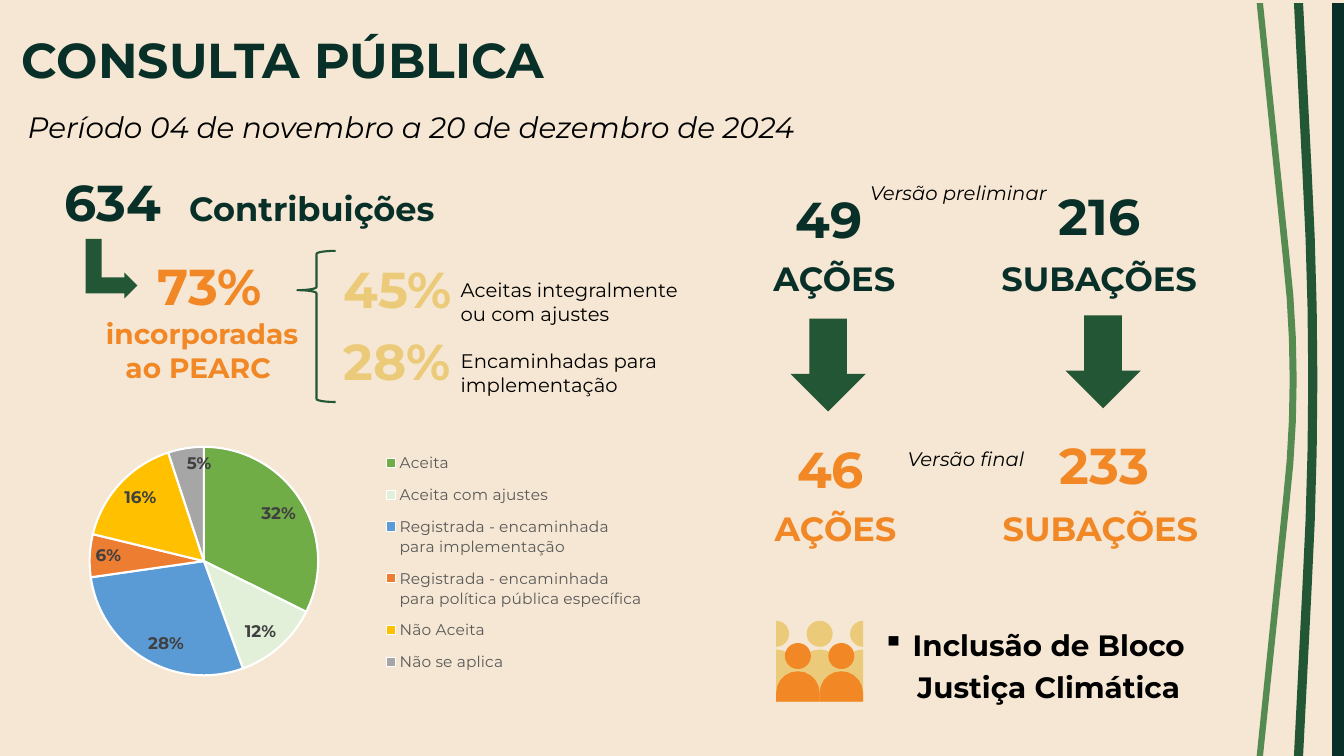
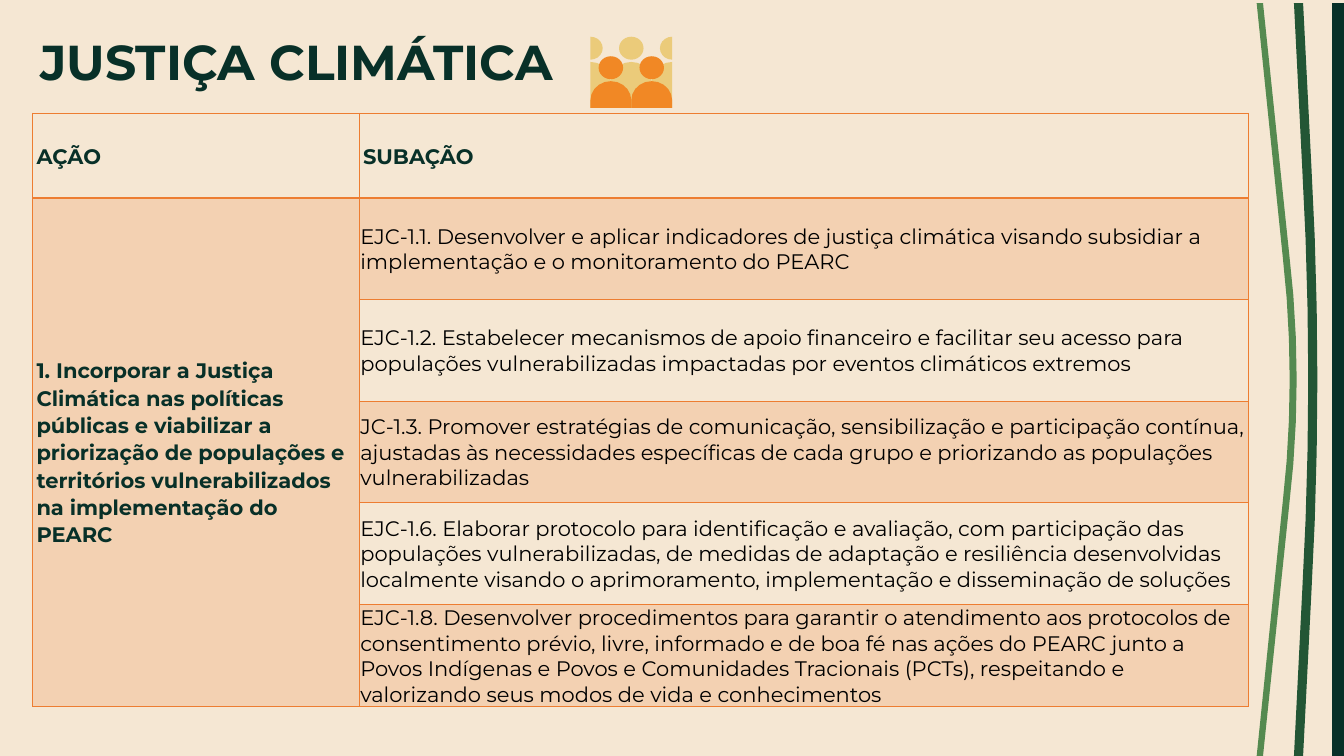
from math import cos, pi, sin

from lxml.etree import SubElement
from pptx import Presentation
from pptx.chart.data import CategoryChartData
from pptx.dml.color import RGBColor
from pptx.enum.chart import XL_CHART_TYPE, XL_LABEL_POSITION, XL_LEGEND_POSITION
from pptx.enum.shapes import MSO_SHAPE
from pptx.enum.text import MSO_ANCHOR, PP_ALIGN
from pptx.oxml import parse_xml
from pptx.oxml.ns import nsdecls, qn
from pptx.util import Cm, Pt

FONT = "Montserrat"
CREAM = RGBColor(0xF5, 0xE7, 0xD3)
DARK = RGBColor(0x08, 0x30, 0x28)
GREEN = RGBColor(0x23, 0x56, 0x35)
LIGHT_GREEN = RGBColor(0x55, 0x8A, 0x50)
ORANGE = RGBColor(0xF1, 0x88, 0x25)
SAND = RGBColor(0xEB, 0xCB, 0x7A)
TABLE_ORANGE = RGBColor(0xED, 0x7D, 0x31)
BLACK = RGBColor(0, 0, 0)
WHITE = RGBColor(0xFF, 0xFF, 0xFF)
LABEL_GRAY = RGBColor(0x40, 0x40, 0x40)
LEGEND_GRAY = RGBColor(0x59, 0x59, 0x59)

CENTER = PP_ALIGN.CENTER
BOLD = {"bold": True}
ITALIC = {"italic": True, "spacing": 1.2}

# Outlines in cm: two numbers are a straight step, six a Bézier curve
BANDS = [
    (DARK, [(33.56, 0.08), (33.87, 0.08), (33.87, 19.05), (33.56, 19.05)]),
    (GREEN, [(32.84, 0.08), (32.61, 0.08), (32.82, 4.27),
             (33.02, 7.77, 33.02, 11.35, 32.82, 14.86),
             (32.61, 19.05), (32.84, 19.05), (33.05, 14.94),
             (33.25, 11.38, 33.25, 7.75, 33.05, 4.19)]),
    (LIGHT_GREEN, [(32.49, 6.4), (31.83, 0.08), (31.67, 0.08), (32.33, 6.5),
                   (32.56, 8.51, 32.56, 10.62, 32.33, 12.62),
                   (31.67, 19.05), (31.83, 19.05), (32.49, 12.73),
                   (32.74, 10.67, 32.74, 8.46, 32.49, 6.4)]),
]

# Fractions of the icon: colour, centres, head height, shoulder height
PEOPLE_ROWS = [
    (SAND, (0, 0.5, 1), 0.22, 0.4),
    (ORANGE, (0.25, 0.75), 0.475, 0.65),
]
HEAD_RADIUS = 0.15
BODY_RADIUS = 0.25

# text, left, top, width, height, size, colour, style
CONSULTATION_TEXTS = [
    ("Período 04 de novembro a 20 de dezembro de 2024",
     0.45, 2.44, 21, 1.24, 21, BLACK, ITALIC),
    ("634", 1.37, 4.19, 3.4, 1.8, 36, DARK, BOLD),
    ("Contribuições", 4.23, 4.6, 7.26, 1.27, 24, DARK, {**BOLD, "align": CENTER}),
    ("73%", 3.72, 6.31, 3.6, 1.8, 36, ORANGE, BOLD),
    ("incorporadas ao PEARC ", 2.21, 7.85, 5.77, 1.96, 20, ORANGE,
     {**BOLD, "align": CENTER}),
    ("Versão preliminar", 21.68, 4.32, 7.19, 0.91, 14, BLACK, ITALIC),
    ("Versão final", 20.75, 11.01, 7.19, 0.91, 14, BLACK, {**ITALIC, "align": CENTER}),
    ("Inclusão de Bloco Justiça Climática", 20.4, 15.49, 10.82, 2.34, 21, BLACK,
     {**BOLD, "align": CENTER, "spacing": 1.2, "bullet": "▪"}),
]
SHARES = [
    ("45%", "Aceitas integralmente ou com ajustes"),
    ("28%", "Encaminhadas para implementação"),
]
SHARE_STEP = 1.8
# unit, preliminary and final count, count left and top, unit left and width, arrow left and top
COUNTS = [
    ("AÇÕES", "49", "46", 19.81, 4.62, 19.08, 3.89, 19.92, 8.03),
    ("SUBAÇÕES", "216", "233", 26.43, 4.53, 24.83, 5.74, 26.85, 7.95),
]
VERSION_STEP = (0.03, 6.29)

ANSWERS = [
    ("Aceita", 32, RGBColor(0x70, 0xAD, 0x47)),
    ("Aceita com ajustes", 12, RGBColor(0xE2, 0xF0, 0xD9)),
    ("Registrada - encaminhada para implementação", 28, RGBColor(0x5B, 0x9B, 0xD5)),
    ("Registrada - encaminhada para política pública específica", 6, TABLE_ORANGE),
    ("Não Aceita", 16, RGBColor(0xFF, 0xC0, 0x00)),
    ("Não se aplica", 5, RGBColor(0xA6, 0xA6, 0xA6)),
]

HEADERS = ["AÇÃO", "SUBAÇÃO"]
ACTION = ("1. Incorporar a Justiça Climática nas políticas públicas e viabilizar a "
          "priorização de populações e territórios vulnerabilizados na implementação do PEARC")
SUBACTIONS = [
    "EJC-1.1. Desenvolver e aplicar indicadores de justiça climática visando subsidiar a "
    "implementação e o monitoramento do PEARC",
    "EJC-1.2. Estabelecer mecanismos de apoio financeiro e facilitar seu acesso para "
    "populações vulnerabilizadas impactadas por eventos climáticos extremos",
    "JC-1.3. Promover estratégias de comunicação, sensibilização e participação contínua, "
    "ajustadas às necessidades específicas de cada grupo e priorizando as populações "
    "vulnerabilizadas",
    "EJC-1.6. Elaborar protocolo para identificação e avaliação, com participação das "
    "populações vulnerabilizadas, de medidas de adaptação e resiliência desenvolvidas "
    "localmente visando o aprimoramento, implementação e disseminação de soluções",
    "EJC-1.8. Desenvolver procedimentos para garantir o atendimento aos protocolos de "
    "consentimento prévio, livre, informado e de boa fé nas ações do PEARC junto a Povos "
    "Indígenas e Povos e Comunidades Tracionais (PCTs), respeitando e valorizando seus "
    "modos de vida e conhecimentos",
]


def style_font(font, size, color, bold=False, italic=False):
    font.name, font.size, font.bold, font.italic = FONT, Pt(size), bold, italic
    font.color.rgb = color


def add_text(slide, text, left, top, width, height, size, color, style):
    frame = slide.shapes.add_textbox(Cm(left), Cm(top), Cm(width), Cm(height)).text_frame
    frame.word_wrap = True
    frame.vertical_anchor = style.get("anchor", MSO_ANCHOR.TOP)
    frame.text = text
    paragraph = frame.paragraphs[0]
    paragraph.alignment = style.get("align", PP_ALIGN.LEFT)
    paragraph.line_spacing = style.get("spacing", 1.0)
    if "bullet" in style:
        properties = paragraph._p.get_or_add_pPr()
        properties.set("marL", str(Cm(1.24)))
        properties.set("indent", str(-Cm(0.76)))
        SubElement(properties, qn("a:buChar"), char=style["bullet"])
    style_font(paragraph.runs[0].font, size, color,
               style.get("bold", False), style.get("italic", False))


def add_preset(shapes, kind, left, top, width, height, color, rotation=0, adjustments=()):
    shape = shapes.add_shape(kind, Cm(left), Cm(top), Cm(width), Cm(height))
    shape.rotation = rotation
    for index, value in enumerate(adjustments):
        shape.adjustments[index] = value
    paint(shape, color)
    return shape


def paint(shape, color):
    shape.shadow.inherit = False
    shape.fill.solid()
    shape.fill.fore_color.rgb = color
    shape.line.fill.background()


def add_outline(shapes, points, color):
    corners = [(Cm(x), Cm(y)) for x, y in points]
    builder = shapes.build_freeform(*corners[0])
    builder.add_line_segments(corners[1:], close=True)
    paint(builder.convert_to_shape(), color)


def flatten(outline, pieces=6):
    """Turn an outline with Bézier steps into plain points."""
    points = []
    for step in outline:
        if len(step) == 2:
            points.append(step)
            continue
        (x0, y0), (x1, y1, x2, y2, x3, y3) = points[-1], step
        for t in (i / pieces for i in range(1, pieces + 1)):
            a, b, c, d = (1 - t) ** 3, 3 * t * (1 - t) ** 2, 3 * t * t * (1 - t), t ** 3
            points.append((a * x0 + b * x1 + c * x2 + d * x3,
                           a * y0 + b * y1 + c * y2 + d * y3))
    return points


def arc(x, y, radius, start, end):
    """Points on a circle between two angles, counted in quarter turns."""
    pieces = 5 * (end - start)
    angles = [(start + i / 5) * pi / 2 for i in range(pieces + 1)]
    return [(x + radius * cos(angle), y + radius * sin(angle)) for angle in angles]


def add_people_icon(slide, left, top, width, height):
    shapes = slide.shapes.add_group_shape().shapes
    add_preset(shapes, MSO_SHAPE.RECTANGLE, left, top, width, height, CREAM)

    def place(points):
        return [(left + width * x, top + height * y) for x, y in points]

    for color, centers, head, shoulder in PEOPLE_ROWS:
        for x in centers:
            first, last = (3 if x == 0 else 2), (3 if x == 1 else 4)
            body = arc(x, shoulder + BODY_RADIUS, BODY_RADIUS, first, last)
            body += [(body[-1][0], 1), (body[0][0], 1)]
            add_outline(shapes, place(body), color)
            if x in (0, 1):
                half = arc(x, head, HEAD_RADIUS, 3 - 2 * x, 5 - 2 * x)
                add_outline(shapes, place(half), color)
            else:
                corner = place([(x - HEAD_RADIUS, head - HEAD_RADIUS)])[0]
                add_preset(shapes, MSO_SHAPE.OVAL, *corner, 2 * HEAD_RADIUS * width,
                           2 * HEAD_RADIUS * height, color)


def add_slide(presentation, title, left, top, width, height):
    slide = presentation.slides.add_slide(presentation.slide_layouts[6])
    add_text(slide, title, left, top, width, height, 35, DARK,
             {**BOLD, "spacing": 0.9, "anchor": MSO_ANCHOR.MIDDLE})
    bands = slide.shapes.add_group_shape()
    for color, outline in BANDS:
        add_outline(bands.shapes, flatten(outline), color)
    return slide


def set_layout(parent, position, x, y, width, height, inner=False):
    """Fix the place of a chart part, in fractions of the chart."""
    for old in parent.findall(qn("c:layout")):
        parent.remove(old)
    layout = parse_xml(f"<c:layout {nsdecls('c')}><c:manualLayout/></c:layout>")
    values = {"xMode": "edge", "yMode": "edge", "x": x, "y": y, "w": width, "h": height}
    if inner:
        values = {"layoutTarget": "inner", **values}
    for name, value in values.items():
        SubElement(layout[0], qn(f"c:{name}"), val=str(value))
    parent.insert(position, layout)


def add_answers_chart(slide):
    data = CategoryChartData()
    data.categories = [name for name, _, _ in ANSWERS]
    data.add_series("Series 1", [value for _, value, _ in ANSWERS])
    chart = slide.shapes.add_chart(XL_CHART_TYPE.PIE, Cm(0.63), Cm(10.55),
                                   Cm(15.82), Cm(7.11), data).chart
    style_font(chart.font, 12, BLACK)
    chart.has_title = False
    chart.has_legend = True
    chart.legend.position = XL_LEGEND_POSITION.RIGHT
    chart.legend.include_in_layout = False
    style_font(chart.legend.font, 11, LEGEND_GRAY)
    set_layout(chart.legend._element, 1, 0.58, 0.08, 0.41, 0.86)
    set_layout(chart._chartSpace.chart.plotArea, 0, 0.04, 0.1, 0.49, 0.81, inner=True)
    plot = chart.plots[0]
    plot.vary_by_categories = True
    plot.has_data_labels = True
    labels = plot.data_labels
    labels.show_percentage, labels.show_value = True, False
    labels.number_format, labels.number_format_is_linked = "0%", False
    labels.position = XL_LABEL_POSITION.INSIDE_END
    style_font(labels.font, 12, LABEL_GRAY, bold=True)
    for index, (_, _, color) in enumerate(ANSWERS):
        slice_format = plot.series[0].points[index].format
        slice_format.fill.solid()
        slice_format.fill.fore_color.rgb = color
        slice_format.line.color.rgb = WHITE
        slice_format.line.width = Pt(1.5)


def fill_cell(cell, text, color, bold, margins, tinted, bottom=0.5):
    cell.text = text
    cell.vertical_anchor = MSO_ANCHOR.MIDDLE
    cell.margin_left = cell.margin_right = Cm(margins[0])
    cell.margin_top, cell.margin_bottom = Cm(margins[1]), 0
    if text:
        paragraph = cell.text_frame.paragraphs[0]
        paragraph.line_spacing = 1.07 if bold else 1.0
        style_font(paragraph.runs[0].font, 15, color, bold)
    properties = cell._tc.get_or_add_tcPr()
    if tinted:
        cell.fill.solid()
        cell.fill.fore_color.rgb = TABLE_ORANGE
        SubElement(properties.find(".//" + qn("a:srgbClr")), qn("a:alpha"), val="20000")
    else:
        cell.fill.background()
    for index, side in enumerate("LRTB"):
        width = Pt(bottom if side == "B" else 0.5)
        properties.insert(index, parse_xml(
            f'<a:ln{side} {nsdecls("a")} w="{width}"><a:solidFill>'
            f'<a:srgbClr val="{TABLE_ORANGE}"/></a:solidFill></a:ln{side}>'))


def add_actions_table(slide):
    heights = [2.14] + [2.56] * len(SUBACTIONS)
    table = slide.shapes.add_table(len(heights), 2, Cm(0.82), Cm(2.85),
                                   Cm(30.63), Cm(sum(heights))).table
    table.first_row = table.horz_banding = False
    table.columns[0].width, table.columns[1].width = Cm(8.23), Cm(22.4)
    for row, height in zip(table.rows, heights):
        row.height = Cm(height)
    for column, header in enumerate(HEADERS):
        fill_cell(table.cell(0, column), header, DARK, True, (0.1, 0), False, bottom=1.5)
    for row, subaction in enumerate(SUBACTIONS, 1):
        fill_cell(table.cell(row, 0), ACTION if row == 1 else "", DARK, True, (0.1, 0), True)
        fill_cell(table.cell(row, 1), subaction, BLACK, False, (0.03, 0.03), row % 2 == 1)
    table.cell(1, 0).merge(table.cell(len(SUBACTIONS), 0))


def build_consultation(presentation):
    slide = add_slide(presentation, "CONSULTA PÚBLICA", 0.3, 0.08, 25.65, 3)
    for item in CONSULTATION_TEXTS:
        add_text(slide, *item)
    for index, (share, meaning) in enumerate(SHARES):
        shift = index * SHARE_STEP
        add_text(slide, share, 8.41, 6.39 + shift, 3.6, 1.8, 36, SAND, BOLD)
        add_text(slide, meaning, 11.36, 6.88 + shift, 6.4, 1.45, 14, BLACK, {})
    for unit, before, after, left, top, unit_left, width, arrow_left, arrow_top in COUNTS:
        for index, (count, color) in enumerate([(before, DARK), (after, ORANGE)]):
            across, down = (index * step for step in VERSION_STEP)
            add_text(slide, count, left + across, top + down, 3.4, 1.8, 36, color, BOLD)
            add_text(slide, unit, unit_left + across, 6.38 + down, width, 1.27, 24, color,
                     {**BOLD, "align": CENTER})
        add_preset(slide.shapes, MSO_SHAPE.DOWN_ARROW, arrow_left, arrow_top, 1.9, 2.34, GREEN)
    add_preset(slide.shapes, MSO_SHAPE.BENT_UP_ARROW, 2.06, 6.12, 1.5, 1.3, GREEN, 90,
               (0.31, 0.25, 0.25))
    brace = add_preset(slide.shapes, MSO_SHAPE.RIGHT_BRACE, 7.49, 6.32, 0.97, 3.81, GREEN, 180,
                       (0.08, 0.74))
    brace.fill.background()
    brace.line.color.rgb = GREEN
    brace.line.width = Pt(1.5)
    add_answers_chart(slide)
    add_people_icon(slide, 19.56, 15.49, 2.19, 2.19)


def main():
    presentation = Presentation()
    presentation.slide_width, presentation.slide_height = Cm(33.87), Cm(19.05)
    background = presentation.slide_master.background.fill
    background.solid()
    background.fore_color.rgb = CREAM
    build_consultation(presentation)
    justice = add_slide(presentation, "JUSTIÇA CLIMÁTICA", 0.76, 0.53, 29.21, 2.18)
    add_people_icon(justice, 14.88, 0.79, 2.06, 1.93)
    add_actions_table(justice)
    presentation.save("out.pptx")


if __name__ == "__main__":
    main()
